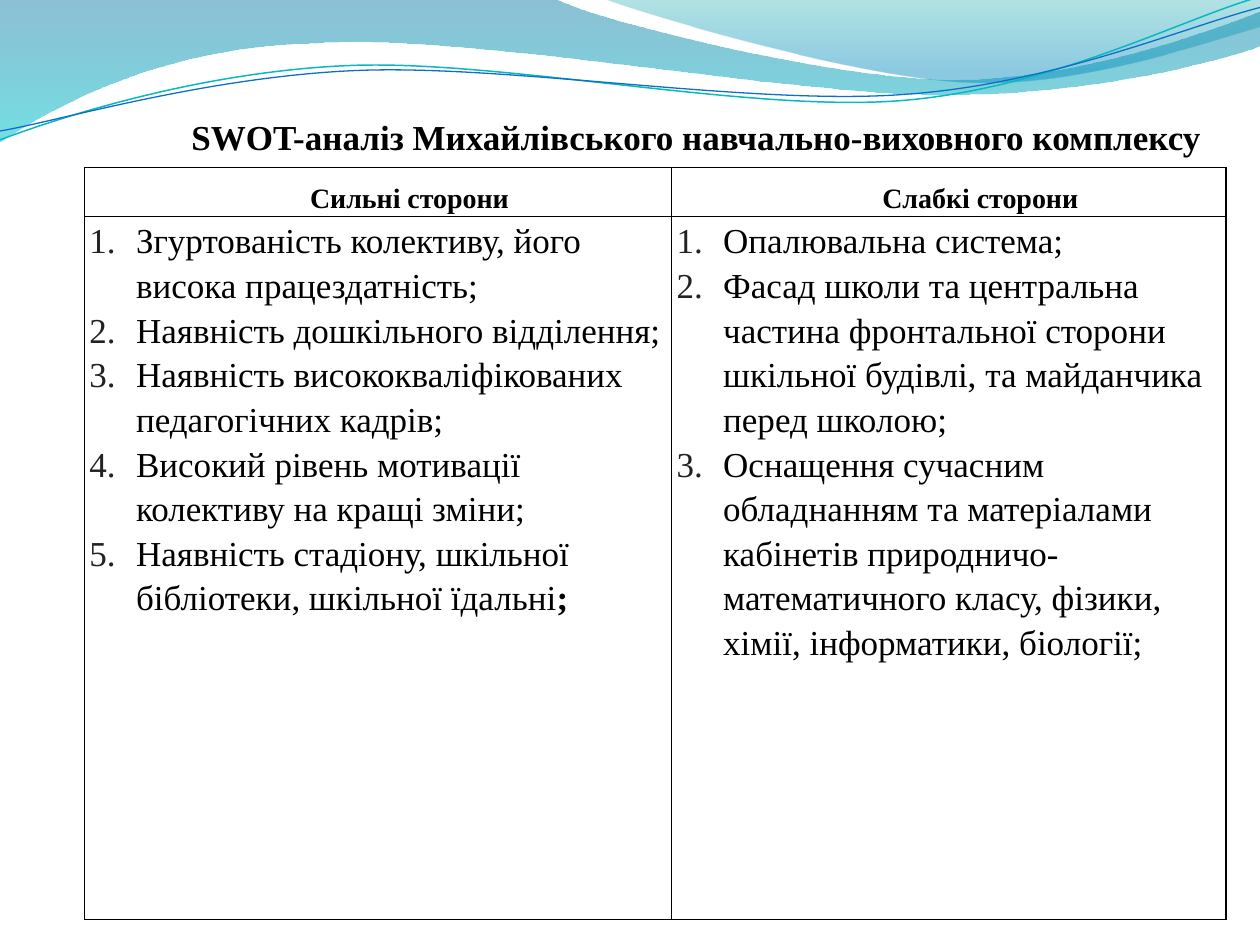
from dataclasses import dataclass
from math import cos, radians, sin

from lxml.etree import SubElement
from pptx import Presentation
from pptx.dml.color import RGBColor
from pptx.enum.text import MSO_ANCHOR as Anchor, PP_ALIGN as Align
from pptx.oxml.ns import qn
from pptx.util import Inches, Pt


@dataclass(frozen=True)
class Theme:
    font: str = "Times New Roman"
    text: str = "000000"
    number: str = "222222"
    border: str = "000000"
    body_size: int = 20
    header_size: int = 16
    # Gradient stops: position, colour, opacity in percent
    back_wave: tuple = ((0, "0074A1", 45), (1, "00C6CF", 55))
    front_wave: tuple = ((0, "00A1A9", 30), (0.8, "008BBF", 45))
    teal_line: str = "0AB8BF"
    blue_line: str = "0F6FC6"


THEME = Theme()
WIDTH, HEIGHT = 10, 7.5
LINE_TILT = -2.7

# Outlines in inches: a pair is a straight step, six numbers are a Bezier curve
BACK_WAVE = [
    (0, 0), (4.4, -0.01), (4.76, 0.17, 6.64, 0.63, 7.58, 0.63),
    (8.53, 0.63, 9.58, 0.26, 10, 0.09), (10.01, 0.36),
    (9.83, 0.44, 8.7, 0.76, 7.46, 0.75), (6.22, 0.75, 3.82, 0.28, 2.57, 0.34),
    (1.29, 0.36, 0.46, 0.83, -0.01, 1.13),
]
FRONT_WAVE = [
    (4.79, -0.01), (5.09, 0.11, 6.82, 0.62, 7.69, 0.65),
    (8.56, 0.69, 9.61, 0.32, 10, 0.21), (10, 0),
]
TEAL_LINE = [
    (0, 1.11), (0.48, 0.93, 1.58, 0.57, 2.77, 0.52),
    (3.95, 0.47, 5.93, 0.89, 7.13, 0.8), (8.33, 0.71, 9.38, 0.15, 9.98, -0.02),
]
BLUE_LINE = [
    (0, 1.04), (0.47, 0.96, 1.64, 0.61, 2.83, 0.56),
    (4.03, 0.51, 5.97, 0.84, 7.17, 0.75), (8.36, 0.67, 9.41, 0.21, 10, 0.06),
]

TITLE = "SWOT-аналіз Михайлівського навчально-виховного комплексу"
HEADERS = ["Сильні сторони", "Слабкі сторони"]
STRENGTHS = [
    ["Згуртованість колективу, його висока працездатність;"],
    ["Наявність дошкільного відділення;"],
    ["Наявність висококваліфікованих педагогічних кадрів;"],
    ["Високий рівень мотивації колективу на кращі зміни;"],
    ["Наявність стадіону, шкільної бібліотеки, шкільної їдальні", ";"],
]
WEAKNESSES = [
    ["Опалювальна система;"],
    ["Фасад школи та центральна частина фронтальної сторони шкільної будівлі, "
     "та майданчика перед школою;"],
    ["Оснащення сучасним обладнанням та матеріалами кабінетів "
     "природничо-математичного класу, фізики, хімії, інформатики, біології;"],
]


def write(paragraph, text, size=THEME.body_size, bold=False, align=None, spacing=None):
    run = paragraph.add_run()
    run.text = text
    run.font.name, run.font.size, run.font.bold = THEME.font, Pt(size), bold
    run.font.color.rgb = RGBColor.from_string(THEME.text)
    run.font._element.set("kern", "0")
    if align is not None:
        paragraph.alignment = align
    if spacing is not None:
        paragraph.line_spacing = spacing


def turn(point, center, degrees):
    angle = radians(degrees)
    x, y = point[0] - center[0], point[1] - center[1]
    return (center[0] + x * cos(angle) - y * sin(angle),
            center[1] + x * sin(angle) + y * cos(angle))


def add_outline(slide, origin, outline, closed, center=(0, 0), tilt=0):
    """Draw an outline; a tilted one is stored level and rotated about its center."""
    points = [turn(step[index:index + 2], center, -tilt)
              for step in outline for index in range(0, len(step), 2)]
    points = [(Inches(origin[0] + x), Inches(origin[1] + y)) for x, y in points]
    builder = slide.shapes.build_freeform(*points[0])
    builder.add_line_segments(points[1:], close=closed)
    shape = builder.convert_to_shape()
    shape.shadow.inherit = False
    shape.rotation = tilt
    # Join each three points of a curved step into one Bezier segment
    segments = iter(list(shape.element.iter(qn("a:lnTo"))))
    for step in outline[1:]:
        segment = next(segments)
        if len(step) == 6:
            segment.tag = qn("a:cubicBezTo")
            for extra in (next(segments), next(segments)):
                segment.append(extra[0])
                extra.getparent().remove(extra)
    return shape


def add_waves(slide, origin):
    # Translucent gradient bands
    for outline, stops in ((BACK_WAVE, THEME.back_wave), (FRONT_WAVE, THEME.front_wave)):
        shape = add_outline(slide, origin, outline, closed=True)
        shape.line.fill.background()
        shape.fill.gradient()
        shape.fill.gradient_angle = 270
        colors = shape.element.iter(qn("a:gs"))
        for stop, node, (position, color, opacity) in zip(
                shape.fill.gradient_stops, colors, stops):
            stop.position = position
            stop.color.rgb = RGBColor.from_string(color)
            SubElement(node[0], qn("a:alpha"), val=str(opacity * 1000))
    # Thin tilted lines
    for outline, center, color, width in (
            (TEAL_LINE, (4.99, 0.57), THEME.teal_line, 0.85),
            (BLUE_LINE, (5, 0.59), THEME.blue_line, 0.75)):
        shape = add_outline(slide, origin, outline, False, center, LINE_TILT)
        shape.fill.background()
        shape.line.color.rgb = RGBColor.from_string(color)
        shape.line.width = Pt(width)


def add_title(slide, box):
    frame = slide.shapes.add_textbox(*map(Inches, box)).text_frame
    frame.word_wrap = True
    frame.vertical_anchor = Anchor.MIDDLE
    frame.margin_left = frame.margin_right = 0
    write(frame.paragraphs[0], TITLE, bold=True, align=Align.CENTER)


def style_cell(cell):
    properties = cell._tc.get_or_add_tcPr()
    for side in ("lnL", "lnR", "lnT", "lnB"):
        line = SubElement(properties, qn(f"a:{side}"), w=str(Pt(1)))
        fill = SubElement(line, qn("a:solidFill"))
        SubElement(fill, qn("a:srgbClr"), val=THEME.border)
    cell.fill.background()
    cell.margin_left = cell.margin_right = Inches(0.04)
    cell.margin_top = cell.margin_bottom = 0


def indent(paragraph, left, first=0):
    properties = paragraph._p.get_or_add_pPr()
    properties.set("marL", str(Inches(left)))
    properties.set("indent", str(Inches(first)))
    return properties


def write_numbered(frame, items):
    for index, (text, *bold_tail) in enumerate(items):
        paragraph = frame.add_paragraph() if index else frame.paragraphs[0]
        write(paragraph, text, spacing=1.15)
        for tail in bold_tail:
            write(paragraph, tail, bold=True)
        properties = indent(paragraph, 0.37, -0.37)
        color = SubElement(properties, qn("a:buClr"))
        SubElement(color, qn("a:srgbClr"), val=THEME.number)
        SubElement(properties, qn("a:buFont"), typeface=THEME.font)
        SubElement(properties, qn("a:buAutoNum"), type="arabicPeriod")


def add_swot_table(slide, box):
    left, top, width, height = box
    table = slide.shapes.add_table(2, 2, *map(Inches, box)).table
    table.first_row = table.horz_banding = False
    header_height, first_width = 0.39, 4.66
    for row, size in zip(table.rows, (header_height, height - header_height)):
        row.height = Inches(size)
    for column, size in zip(table.columns, (first_width, width - first_width)):
        column.width = Inches(size)
    for index, (header, items) in enumerate(zip(HEADERS, (STRENGTHS, WEAKNESSES))):
        head, body = table.cell(0, index), table.cell(1, index)
        style_cell(head)
        style_cell(body)
        paragraph = head.text_frame.paragraphs[0]
        write(paragraph, header, size=THEME.header_size, bold=True,
              align=Align.CENTER, spacing=1.5)
        indent(paragraph, 0.5)
        write_numbered(body.text_frame, items)


def main():
    presentation = Presentation()
    presentation.slide_width, presentation.slide_height = Inches(WIDTH), Inches(HEIGHT)
    slide = presentation.slides.add_slide(presentation.slide_layouts[6])
    add_waves(slide, (0, 0))
    add_swot_table(slide, (0.67, 1.33, 9.06, 5.97))
    add_title(slide, (1.3, 0.86, 8.45, 0.44))
    presentation.save("out.pptx")


if __name__ == "__main__":
    main()
